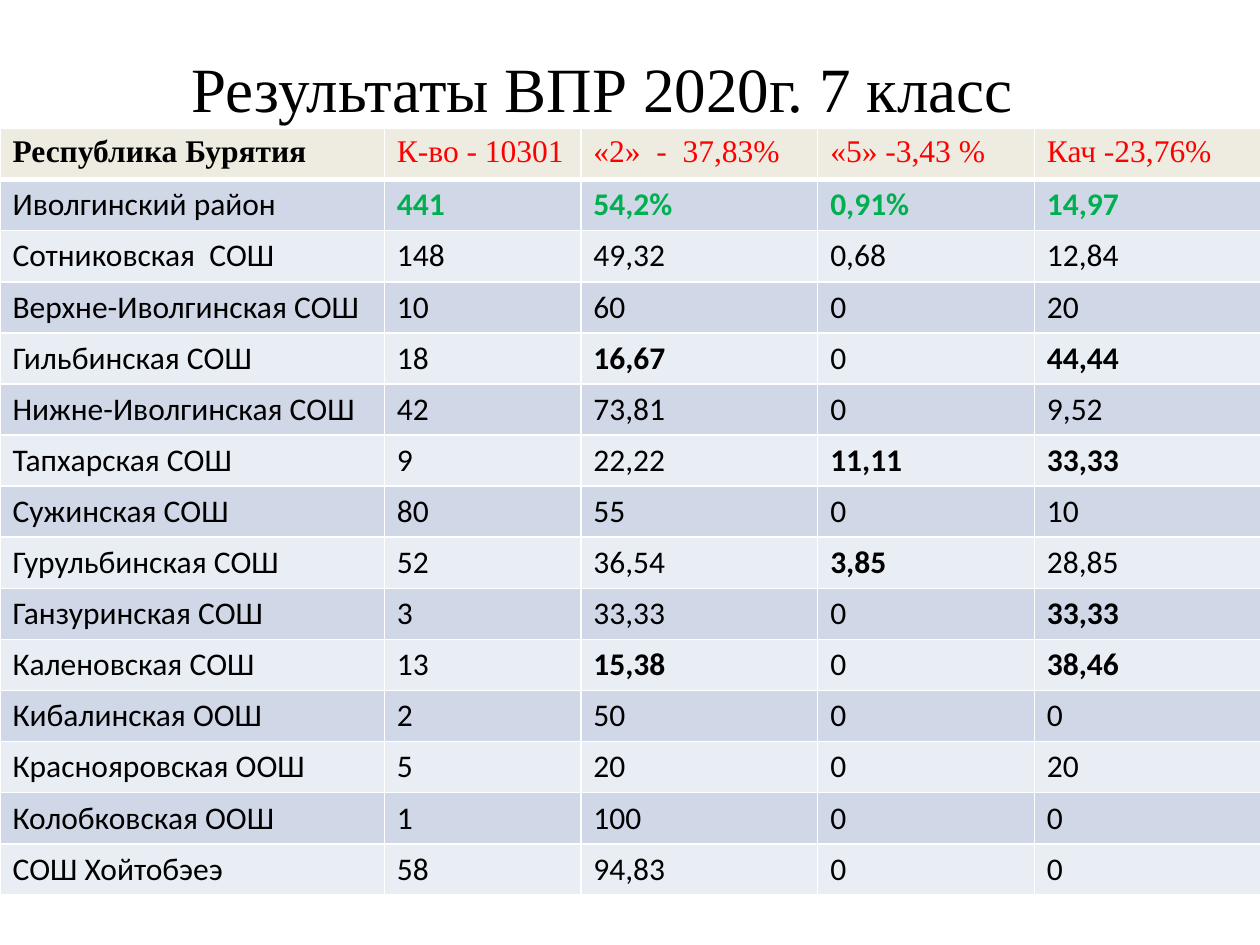
from pptx import Presentation
from pptx.dml.color import RGBColor
from pptx.enum import text
from pptx.oxml import ns, xmlchemy
from pptx.util import Inches, Pt

TITLE = "Результаты ВПР 2020г. 7 класс"
HEADER = ("Республика Бурятия", "К-во - 10301", "«2»  -  37,83%", "«5» -3,43 %", "Кач -23,76%")
DISTRICT = ("Иволгинский район", "441", "54,2%", "0,91%", "14,97")
SCHOOLS = [
    ("Сотниковская  СОШ", "148", "49,32", "0,68", "12,84"),
    ("Верхне-Иволгинская СОШ", "10", "60", "0", "20"),
    ("Гильбинская СОШ", "18", "16,67", "0", "44,44"),
    ("Нижне-Иволгинская СОШ", "42", "73,81", "0", "9,52"),
    ("Тапхарская СОШ", "9", "22,22", "11,11", "33,33"),
    ("Сужинская СОШ", "80", "55", "0", "10"),
    ("Гурульбинская СОШ", "52", "36,54", "3,85", "28,85"),
    ("Ганзуринская СОШ", "3", "33,33", "0", "33,33"),
    ("Каленовская СОШ", "13", "15,38", "0", "38,46"),
    ("Кибалинская ООШ", "2", "50", "0", "0"),
    ("Краснояровская ООШ", "5", "20", "0", "20"),
    ("Колобковская ООШ", "1", "100", "0", "0"),
    ("СОШ Хойтобэеэ", "58", "94,83", "0", "0"),
]
# Columns with a highlighted result, by school
BEST_RESULTS = {
    "Гильбинская СОШ": (2, 4),
    "Тапхарская СОШ": (3, 4),
    "Гурульбинская СОШ": (3,),
    "Ганзуринская СОШ": (4,),
    "Каленовская СОШ": (2, 4),
}
ROWS = [HEADER, DISTRICT, *SCHOOLS]
COLUMN_WIDTHS = (3.05, 1.56, 1.88, 1.72, 1.8)
TABLE_TOP, TABLE_HEIGHT = 1.02, 6.08

THEME = {
    "serif": "Times New Roman", "sans": "Calibri",
    "title_size": 36, "cell_size": 18,
    "text": "000000", "header_value": "FF0000", "district_value": "00B050",
    "header_fill": "EEECE1", "bands": ("D0D8E8", "E9EDF4"),
    "border": "FFFFFF", "border_width": 1, "header_rule": 3,
}


def format_font(font, color, **values):
    font.color.rgb = RGBColor.from_string(color)
    for name, value in values.items():
        setattr(font, name, value)


def cell_format(row, column):
    """Return text colour, typeface and boldness by the cell's role."""
    if row == 0:
        color = THEME["header_value"] if column else THEME["text"]
        return color, THEME["serif"], column == 0
    if row == 1:
        color = THEME["district_value"] if column else THEME["text"]
        return color, THEME["sans"], column > 0
    return THEME["text"], THEME["sans"], column in BEST_RESULTS.get(ROWS[row][0], ())


def add_borders(cell, row):
    """Outline a cell, with a thicker rule between header and body."""
    properties = cell._tc.get_or_add_tcPr()
    for side in "LRTB":
        is_rule = (row, side) in ((0, "B"), (1, "T"))
        width = THEME["header_rule"] if is_rule else THEME["border_width"]
        line = xmlchemy.OxmlElement(f"a:ln{side}")
        line.set("w", str(Pt(width)))
        fill = xmlchemy.OxmlElement("a:solidFill")
        color = xmlchemy.OxmlElement("a:srgbClr")
        color.set("val", THEME["border"])
        fill.append(color)
        line.append(fill)
        properties.append(line)


def add_title(slide):
    title = slide.shapes.title
    title.left, title.top, title.width, title.height = map(Inches, (0.5, 0.3, 8.56, 0.79))
    frame = title.text_frame
    frame.text = TITLE
    frame.auto_size = text.MSO_AUTO_SIZE.NONE
    frame.vertical_anchor = text.MSO_ANCHOR.MIDDLE
    paragraph = frame.paragraphs[0]
    paragraph.alignment = text.PP_ALIGN.CENTER
    format_font(paragraph.runs[0].font, THEME["text"],
                name=THEME["serif"], size=Pt(THEME["title_size"]))


def add_results(slide):
    table = slide.shapes.add_table(
        len(ROWS), len(HEADER), 0, Inches(TABLE_TOP), Inches(10), Inches(TABLE_HEIGHT)).table
    for column, width in zip(table.columns, COLUMN_WIDTHS):
        column.width = Inches(width)
    for row, values in enumerate(ROWS):
        table.rows[row].height = Inches(TABLE_HEIGHT / len(ROWS))
        band = THEME["bands"][(row - 1) % 2] if row else THEME["header_fill"]
        for column, value in enumerate(values):
            cell = table.cell(row, column)
            cell.text = value
            add_borders(cell, row)
            cell.fill.solid()
            cell.fill.fore_color.rgb = RGBColor.from_string(band)
            color, typeface, bold = cell_format(row, column)
            format_font(cell.text_frame.paragraphs[0].runs[0].font, color,
                        name=typeface, bold=bold, size=Pt(THEME["cell_size"]))


def main():
    presentation = Presentation()
    presentation.slide_width, presentation.slide_height = Inches(10), Inches(7.5)
    slide = presentation.slides.add_slide(presentation.slide_layouts.get_by_name("Title Only"))
    add_title(slide)
    add_results(slide)
    presentation.save("out.pptx")


if __name__ == "__main__":
    main()
